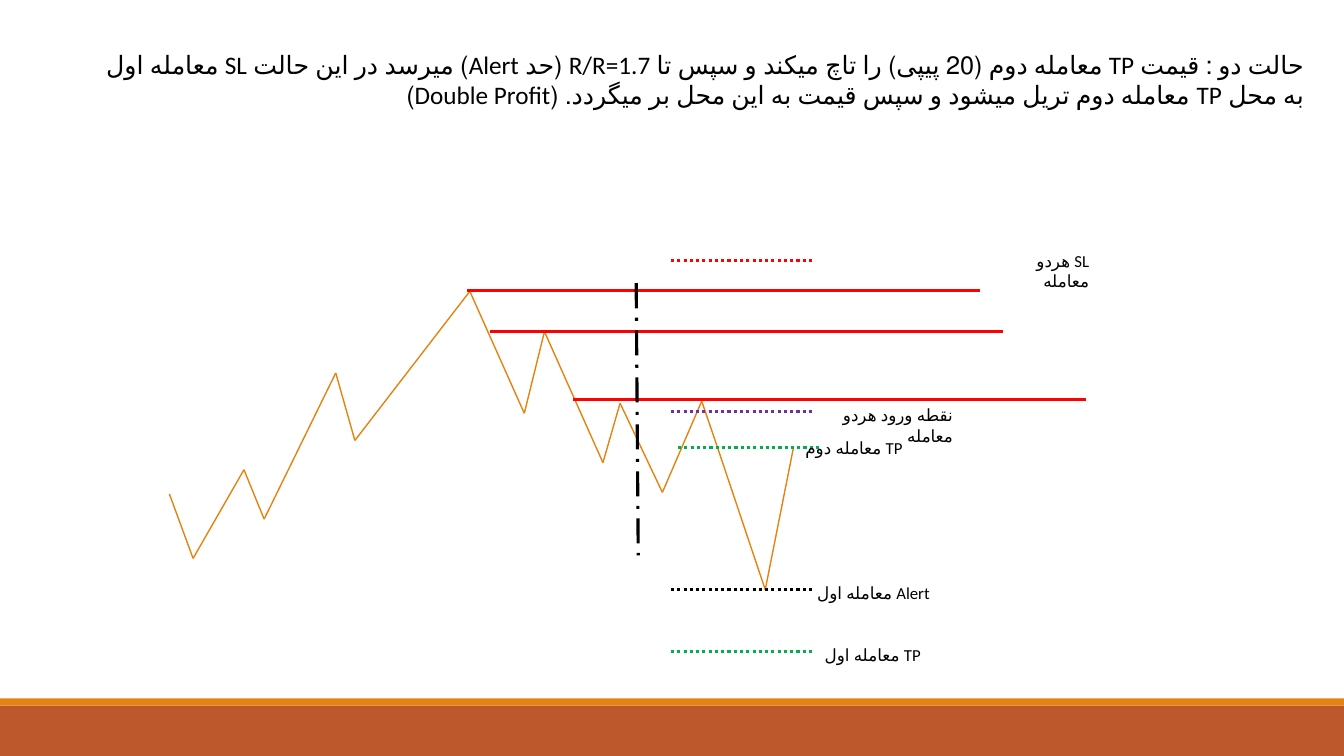
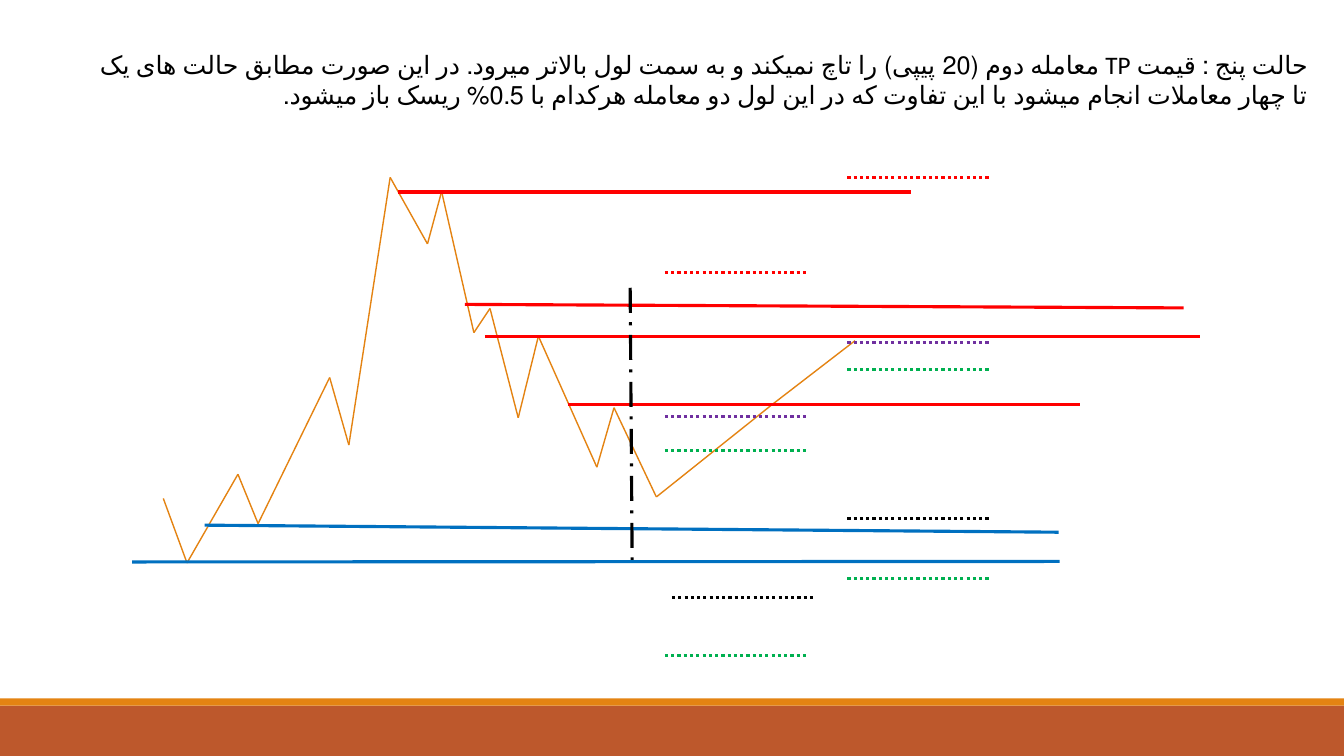
from dataclasses import dataclass
from itertools import pairwise

from lxml.etree import SubElement
from pptx import Presentation
from pptx.dml.color import RGBColor
from pptx.enum.dml import MSO_LINE as Dash
from pptx.enum.lang import MSO_LANGUAGE_ID as Language
from pptx.enum.shapes import MSO_CONNECTOR, MSO_SHAPE
from pptx.enum.text import MSO_AUTO_SIZE, PP_ALIGN
from pptx.oxml.ns import qn
from pptx.slide import Slide
from pptx.util import Inches, Pt

COLORS = {
    "text": "000000",
    "footer": "BD582C",
    "price": "E48312",
    "resistance": "FF0000",
    "support": "0070C0",
    "stop": "FF0000",
    "entry": "7030A0",
    "target": "00B050",
    "alert": "000000",
    "divider": "000000",
}
FONT = "Calibri"
WIDTH, HEIGHT = Inches(13.33), Inches(7.5)
ROWS = 75
CELL = HEIGHT / ROWS
COLUMNS = WIDTH / CELL
FOOTER_ROW, STRIPE_ROWS = 70, 0.7
TITLE_ROW, TITLE_COLUMNS, TITLE_ROWS = 4.4, 122.9, 7.1
LABEL_ROWS = 3
TRADE_COLUMNS = 14
PRICE_PT, LEVEL_PT = 1, 2.25

Point = tuple[float, float]

RALLY = [(16.8, 49), (19.15, 55.4), (24.2, 46.6), (26.2, 51.5), (33.3, 37), (35.2, 43.7)]
PULLBACK = [(52, 41), (54, 32.9), (59.8, 45.9), (61.5, 40), (65.7, 48.85)]
DIVIDER = [(63.1, 28.1), (63.3, 55.1)]


@dataclass(frozen=True)
class Level:
    role: str
    start: Point
    end: Point


@dataclass(frozen=True)
class Trade:
    """A dotted order line."""
    role: str
    column: float
    row: float


@dataclass(frozen=True)
class Label:
    text: str
    column: float
    row: float
    columns: float = 11.8


@dataclass(frozen=True)
class Scenario:
    title: str
    title_column: float
    swings: list[Point]
    divider: list[Point]
    levels: list[Level]
    trades: list[Trade]
    labels: list[Label]


def shifted(points: list[Point]) -> list[Point]:
    """Move the shared price pattern to its place in the fifth case."""
    return [(column - 0.6, row + 0.45) for column, row in points]


def grid(cells: float) -> int:
    return round(cells * CELL)


def color(role: str) -> RGBColor:
    return RGBColor.from_string(COLORS[role])


SCENARIOS = [
    Scenario(
        "حالت دو : قیمت TP معامله دوم (20 پیپی) را تاچ میکند و سپس تا R/R=1.7 (حد Alert) "
        "میرسد در این حالت SL معامله اول به محل TP معامله دوم تریل میشود و سپس قیمت به این "
        "محل بر میگردد. (Double Profit)",
        7.4,
        RALLY + [(46.6, 28.9)] + PULLBACK
        + [(69.6, 39.8), (71.1, 44.2), (75.9, 58.5), (78.7, 44.4)],
        DIVIDER,
        [
            Level("resistance", (46.3, 28.85), (97.2, 28.85)),
            Level("resistance", (48.6, 32.9), (99.5, 32.9)),
            Level("resistance", (56.85, 39.6), (107.7, 39.6)),
        ],
        [
            Trade("stop", 66.55, 25.85),
            Trade("entry", 66.55, 40.8),
            Trade("target", 67.25, 44.4),
            Trade("alert", 66.55, 58.5),
            Trade("target", 66.55, 64.6),
        ],
        [
            Label("SL هردو معامله", 97.2, 24.4),
            Label("نقطه ورود هردو معامله", 79.5, 39.7, 16),
            Label("TP معامله دوم", 78.7, 42.9),
            Label("Alert معامله اول", 79.5, 57.3, 13.7),
            Label("TP معامله اول", 80.5, 63.5),
        ],
    ),
    Scenario(
        "حالت پنج : قیمت TP معامله دوم (20 پیپی) را تاچ نمیکند و به سمت لول بالاتر میرود. "
        "در این صورت مطابق حالت های یک تا چهار معاملات انجام میشود با این تفاوت که در این "
        "لول دو معامله هرکدام با 0.5% ریسک باز میشود.",
        7.8,
        shifted(RALLY) + [(38.7, 17.6), (42.4, 24.2), (43.8, 19), (47, 33), (48.6, 30.6)]
        + shifted(PULLBACK) + [(76.5, 40.2), (84.8, 33.8)],
        shifted(DIVIDER),
        [
            Level("resistance", (39.5, 19.05), (90.4, 19.05)),
            Level("resistance", (46.1, 30.2), (117.4, 30.55)),
            Level("resistance", (48.1, 33.4), (119.05, 33.4)),
            Level("resistance", (56.3, 40.1), (107.15, 40.1)),
            Level("support", (20.3, 52.1), (105, 52.8)),
            Level("support", (13.1, 55.75), (105.1, 55.7)),
        ],
        [
            Trade("stop", 65.95, 27),
            Trade("entry", 65.95, 41.3),
            Trade("target", 65.95, 44.7),
            Trade("alert", 66.65, 59.25),
            Trade("target", 65.95, 65.05),
            Trade("stop", 84.05, 17.6),
            Trade("entry", 84.05, 34),
            Trade("target", 84.05, 36.65),
            Trade("alert", 84.05, 51.45),
            Trade("target", 84.05, 57.4),
        ],
        [],
    ),
]


def draw_line(slide: Slide, role: str, start: Point, end: Point,
              width: float = LEVEL_PT, dash: Dash | None = None) -> None:
    line = slide.shapes.add_connector(
        MSO_CONNECTOR.STRAIGHT, *(grid(cells) for cells in (*start, *end)))
    line.line.color.rgb = color(role)
    line.line.width = Pt(width)
    if dash is not None:
        line.line.dash_style = dash
    SubElement(line._element.spPr, qn("a:effectLst"))


def draw_band(slide: Slide, role: str, row: float, rows: float) -> None:
    band = slide.shapes.add_shape(
        MSO_SHAPE.RECTANGLE, 0, grid(row), grid(COLUMNS), grid(rows))
    band.fill.solid()
    band.fill.fore_color.rgb = color(role)
    band.line.fill.background()
    band.shadow.inherit = False


def draw_text(slide: Slide, text: str, column: float, row: float,
              columns: float, rows: float, size: float) -> None:
    """Write a right-to-left Persian paragraph in a box that grows with it."""
    frame = slide.shapes.add_textbox(
        *(grid(cells) for cells in (column, row, columns, rows))).text_frame
    frame.word_wrap = True
    frame.auto_size = MSO_AUTO_SIZE.SHAPE_TO_FIT_TEXT
    paragraph = frame.paragraphs[0]
    paragraph.alignment = PP_ALIGN.RIGHT
    paragraph._p.get_or_add_pPr().set("rtl", "1")
    paragraph.font.name = FONT
    paragraph.font.size = Pt(size)
    paragraph.font.color.rgb = color("text")
    wording = paragraph.add_run()
    wording.text = text
    wording.font.language_id = Language.FARSI


def draw_scenario(slide: Slide, scenario: Scenario) -> None:
    draw_band(slide, "footer", FOOTER_ROW, ROWS - FOOTER_ROW)
    draw_band(slide, "price", FOOTER_ROW - STRIPE_ROWS, STRIPE_ROWS)
    draw_text(slide, scenario.title, scenario.title_column, TITLE_ROW,
              TITLE_COLUMNS, TITLE_ROWS, 18)
    for start, end in pairwise(scenario.swings):
        draw_line(slide, "price", start, end, PRICE_PT)
    for level in scenario.levels:
        draw_line(slide, level.role, level.start, level.end)
    draw_line(slide, "divider", *scenario.divider, dash=Dash.LONG_DASH_DOT)
    for trade in scenario.trades:
        draw_line(slide, trade.role, (trade.column, trade.row),
                  (trade.column + TRADE_COLUMNS, trade.row), dash=Dash.ROUND_DOT)
    for label in scenario.labels:
        draw_text(slide, label.text, label.column, label.row,
                  label.columns, LABEL_ROWS, 12)


def main() -> None:
    deck = Presentation()
    deck.slide_width, deck.slide_height = WIDTH, HEIGHT
    blank = deck.slide_layouts[6]
    for scenario in SCENARIOS:
        draw_scenario(deck.slides.add_slide(blank), scenario)
    deck.save("out.pptx")


if __name__ == "__main__":
    main()
